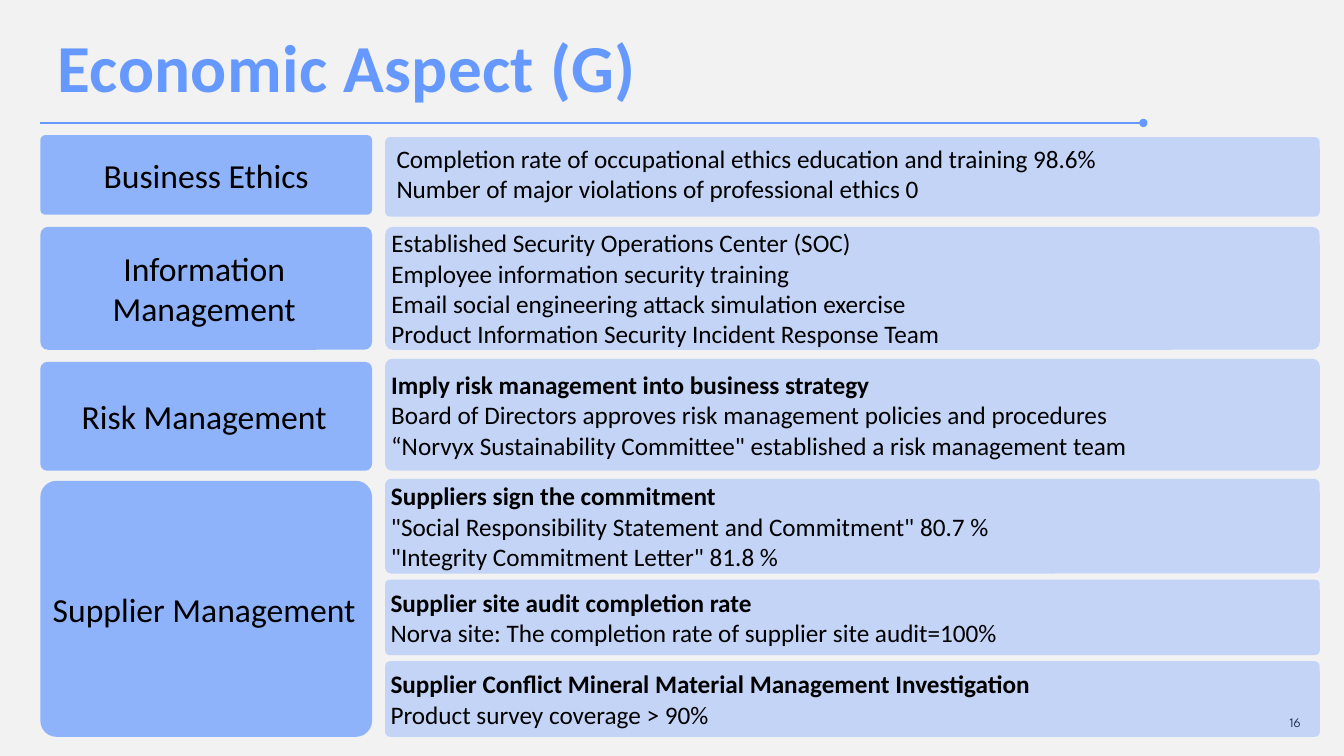
from collections import namedtuple
from dataclasses import dataclass

from lxml.etree import SubElement
from pptx import Presentation
from pptx.dml.color import RGBColor
from pptx.enum.shapes import MSO_CONNECTOR, MSO_SHAPE
from pptx.enum.text import MSO_ANCHOR, PP_ALIGN
from pptx.oxml.ns import qn
from pptx.util import Inches, Pt


@dataclass(frozen=True)
class Theme:
    accent: RGBColor = RGBColor(0x66, 0x99, 0xFF)
    ink: RGBColor = RGBColor(0, 0, 0)
    backdrop: RGBColor = RGBColor(0xF2, 0xF2, 0xF2)
    font: str = "Calibri"
    number_font: str = "League Spartan"
    title_size: float = 48
    topic_size: float = 24
    detail_size: float = 18
    number_size: float = 9.3
    topic_opacity: int = 70
    detail_opacity: int = 33
    corner: float = 0.063


Panel = namedtuple("Panel", "top height heading lines")
Topic = namedtuple("Topic", "name top height panels")

TITLE = "Economic Aspect (G)"
PAGE = "16"
TOPICS = [
    Topic("Business Ethics", 1.34, 0.79, [
        Panel(1.36, 0.79, None, [
            "Completion rate of occupational ethics education and training 98.6%",
            "Number of major violations of professional ethics 0",
        ]),
    ]),
    Topic("Information Management", 2.25, 1.22, [
        Panel(2.25, 1.22, None, [
            "Established Security Operations Center (SOC)",
            "Employee information security training",
            "Email social engineering attack simulation exercise",
            "Product Information Security Incident Response Team",
        ]),
    ]),
    Topic("Risk Management", 3.59, 1.08, [
        Panel(3.56, 1.11, "Imply risk management into business strategy", [
            "Board of Directors approves risk management policies and procedures",
            "“Norvyx Sustainability Committee\" established a risk management team",
        ]),
    ]),
    Topic("Supplier Management", 4.77, 2.54, [
        Panel(4.75, 0.94, "Suppliers sign the commitment", [
            "\"Social Responsibility Statement and Commitment\" 80.7 %",
            "\"Integrity Commitment Letter\" 81.8 %",
        ]),
        Panel(5.75, 0.75, "Supplier site audit completion rate", [
            "Norva site: The completion rate of supplier site audit=100%",
        ]),
        Panel(6.56, 0.75, "Supplier Conflict Mineral Material Management Investigation", [
            "Product survey coverage > 90%",
        ]),
    ]),
]

SLIDE_WIDTH, SLIDE_HEIGHT = 13.33, 7.5
TOPIC_COLUMN = (0.4, 3.29)
DETAIL_COLUMN = (3.82, 9.27)
ROOMY = (0.1, 0.05, 0.1, 0.05)
TIGHT = (0.04, 0.05, 0.08, 0.05)
RULE_Y, RULE_END = 1.22, 11.34
theme = Theme()


def set_frame(frame, insets, anchor):
    frame.word_wrap = True
    frame.vertical_anchor = anchor
    frame.margin_left, frame.margin_top, frame.margin_right, frame.margin_bottom = map(Inches, insets)


def add_run(paragraph, text, size, color=theme.ink, bold=False, font=theme.font):
    run = paragraph.add_run()
    run.text = text
    run.font.name = font
    run.font.size = Pt(size)
    run.font.bold = bold
    run.font.color.rgb = color
    return run


def add_block(slide, column, top, height, opacity, lines, size, align, insets, anchor):
    left, width = column
    block = slide.shapes.add_shape(
        MSO_SHAPE.ROUNDED_RECTANGLE, Inches(left), Inches(top), Inches(width), Inches(height))
    block.adjustments[0] = theme.corner
    block.shadow.inherit = False
    block.line.fill.background()
    block.fill.solid()
    block.fill.fore_color.rgb = theme.accent
    color = block.fill._xPr.find(qn("a:solidFill"))[0]
    SubElement(color, qn("a:alpha"), val=str(opacity * 1000))
    frame = block.text_frame
    set_frame(frame, insets, anchor)
    for index, (text, bold) in enumerate(lines):
        paragraph = frame.add_paragraph() if index else frame.paragraphs[0]
        paragraph.alignment = align
        add_run(paragraph, text, size, bold=bold)


def add_title(slide):
    title = slide.shapes.title
    title.left, title.top, title.width, title.height = map(Inches, (0.57, 0.34, 10.2, 0.73))
    set_frame(title.text_frame, (0, 0, 0, 0), MSO_ANCHOR.TOP)
    paragraph = title.text_frame.paragraphs[0]
    paragraph.alignment = PP_ALIGN.LEFT
    paragraph.line_spacing = 0.9
    run = add_run(paragraph, TITLE, theme.title_size, theme.accent, bold=True)
    run.font._element.set("spc", "30")


def add_rule(slide):
    rule = slide.shapes.add_connector(
        MSO_CONNECTOR.STRAIGHT, Inches(TOPIC_COLUMN[0]), Inches(RULE_Y), Inches(RULE_END), Inches(RULE_Y))
    rule.line.color.rgb = theme.accent
    rule.line.width = Pt(1.5)
    SubElement(rule.line._get_or_add_ln(), qn("a:tailEnd"), type="oval")
    SubElement(rule._element.spPr, qn("a:effectLst"))


def add_page_number(slide):
    number = slide.shapes.add_textbox(*map(Inches, (12.57, 6.9, 0.46, 0.53)))
    set_frame(number.text_frame, (0.13, 0.07, 0.13, 0.07), MSO_ANCHOR.MIDDLE)
    paragraph = number.text_frame.paragraphs[0]
    paragraph.alignment = PP_ALIGN.RIGHT
    add_run(paragraph, PAGE, theme.number_size, font=theme.number_font)


def main():
    deck = Presentation()
    deck.slide_width, deck.slide_height = Inches(SLIDE_WIDTH), Inches(SLIDE_HEIGHT)
    slide = deck.slides.add_slide(deck.slide_layouts.get_by_name("Title Only"))
    slide.background.fill.solid()
    slide.background.fill.fore_color.rgb = theme.backdrop
    add_page_number(slide)
    add_title(slide)
    add_rule(slide)
    for row, topic in enumerate(TOPICS):
        insets = TIGHT if row else ROOMY
        add_block(slide, TOPIC_COLUMN, topic.top, topic.height, theme.topic_opacity,
                  [(topic.name, False)], theme.topic_size, PP_ALIGN.CENTER, insets, MSO_ANCHOR.MIDDLE)
        for panel in topic.panels:
            heading = [(panel.heading, True)] if panel.heading else []
            lines = heading + [(line, False) for line in panel.lines]
            add_block(slide, DETAIL_COLUMN, panel.top, panel.height, theme.detail_opacity,
                      lines, theme.detail_size, PP_ALIGN.LEFT, insets,
                      MSO_ANCHOR.MIDDLE if row else MSO_ANCHOR.TOP)
    deck.save("out.pptx")


if __name__ == "__main__":
    main()
